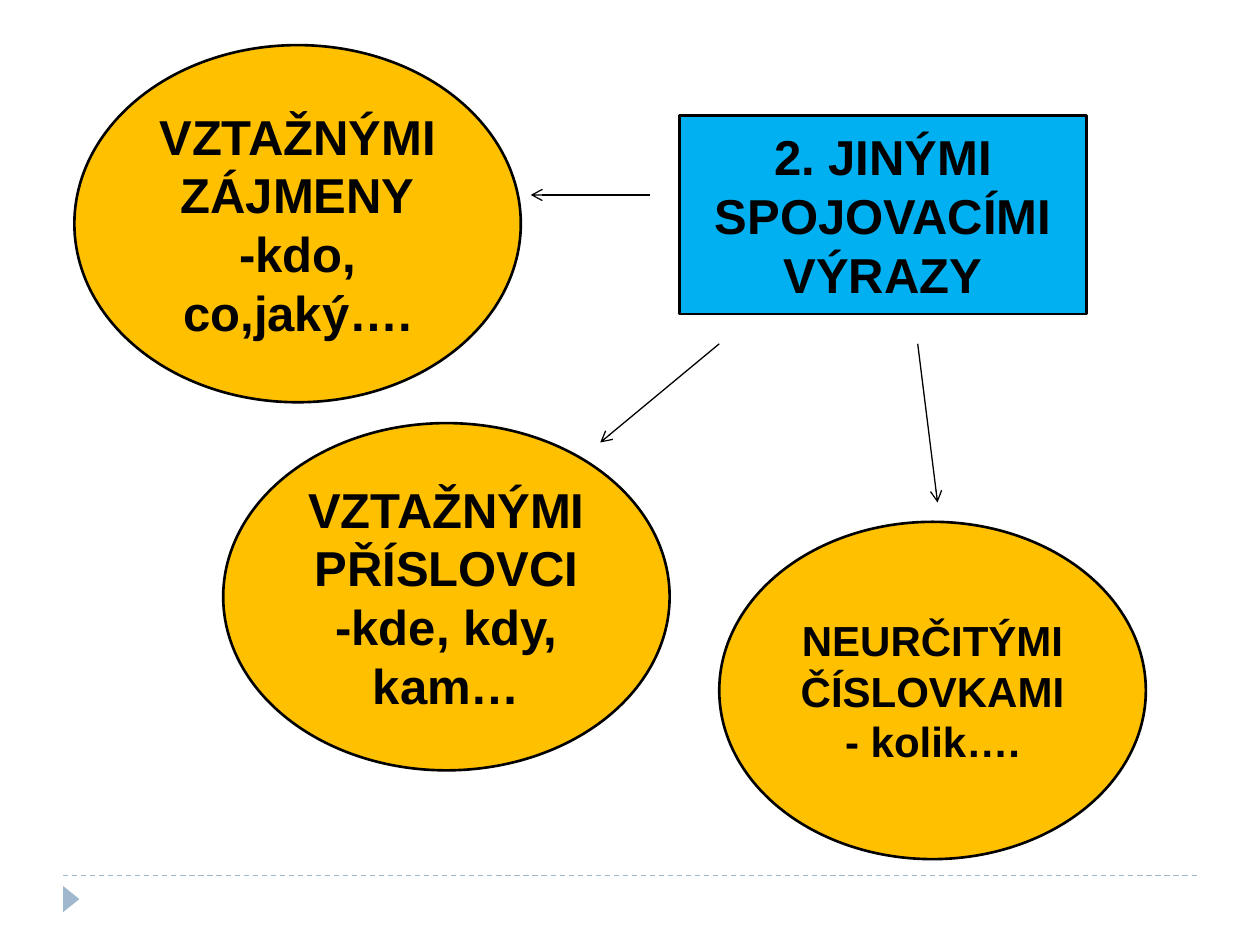
from lxml import etree
from pptx import Presentation
from pptx.dml.color import RGBColor
from pptx.enum.dml import MSO_LINE
from pptx.enum.shapes import MSO_CONNECTOR, MSO_SHAPE
from pptx.enum.text import MSO_ANCHOR, PP_ALIGN
from pptx.oxml.ns import qn
from pptx.util import Cm, Pt

RECT, OVAL = MSO_SHAPE.RECTANGLE, MSO_SHAPE.OVAL
TRIANGLE = MSO_SHAPE.ISOSCELES_TRIANGLE
STRAIGHT, DASH = MSO_CONNECTOR.STRAIGHT, MSO_LINE.DASH
MIDDLE, CENTER = MSO_ANCHOR.MIDDLE, PP_ALIGN.CENTER

BLACK, BLUE, AMBER, ACCENT = "000000", "00B0F0", "FFC000", "9FB8CD"

OVALS = [
    ((14.5, 10.52, 8.6, 6.8), "NEURČITÝMI ČÍSLOVKAMI\v- kolik….", 24),
    ((4.5, 8.53, 9, 7), "VZTAŽNÝMI PŘÍSLOVCI\n-kde, kdy, kam…", 28),
    ((1.5, 0.91, 9, 7.2), "VZTAŽNÝMI ZÁJMENY\n-kdo, co,jaký….", 28),
]
ARROWS = [
    (13.1, 3.93, 10.7, 3.93),
    (14.5, 6.93, 12.1, 8.92),
    (18.5, 6.93, 18.9, 10.13),
]


def color(value):
    """Return the colour for a hex string."""
    return RGBColor.from_string(value)


def add_shape(s, kind, box, fill):
    """Add a filled shape without shadow or outline."""
    sp = s.shapes.add_shape(kind, *map(Cm, box))
    sp.shadow.inherit = False
    sp.fill.solid()
    sp.fill.fore_color.rgb = color(fill)
    sp.line.fill.background()
    return sp


def add_label(s, kind, box, fill, text, size):
    """Add an outlined shape with bold centred text."""
    sp = add_shape(s, kind, box, fill)
    sp.line.color.rgb = color(BLACK)
    sp.line.width = Pt(1.5)
    tf = sp.text_frame
    tf.word_wrap = True
    tf.vertical_anchor = MIDDLE
    tf.text = text
    for p in tf.paragraphs:
        p.alignment = CENTER
        p.font.name = "Arial"
        p.font.size = Pt(size)
        p.font.bold = True
        p.font.color.rgb = color(BLACK)


def add_line(s, ends, line_color):
    """Add a thin straight line without shadow."""
    line = s.shapes.add_connector(STRAIGHT, *map(Cm, ends))
    line.line.color.rgb = color(line_color)
    line.line.width = Pt(0.75)
    etree.SubElement(line._element.spPr, qn("a:effectLst"))
    return line


def add_arrow(s, ends):
    """Add a black line with an open arrowhead at its end."""
    arrow = add_line(s, ends, BLACK)
    etree.SubElement(arrow.line._get_or_add_ln(), qn("a:tailEnd"), type="arrow")


def add_footer(s):
    """Add the dashed footer rule and its triangle marker."""
    rule = add_line(s, (1.27, 17.65, 24.13, 17.65), ACCENT)
    rule.line.dash_style = DASH
    marker = add_shape(s, TRIANGLE, (1.17, 17.96, 0.53, 0.33), ACCENT)
    marker.rotation = 90


def main():
    """Build the slide and save it."""
    prs = Presentation()
    prs.slide_width, prs.slide_height = Cm(25.4), Cm(19.05)
    s = prs.slides.add_slide(prs.slide_layouts[6])
    add_footer(s)
    add_label(s, RECT, (13.7, 2.33, 8.2, 4), BLUE,
              "2. JINÝMI SPOJOVACÍMI VÝRAZY", 28)
    for box, text, size in OVALS:
        add_label(s, OVAL, box, AMBER, text, size)
    for ends in ARROWS:
        add_arrow(s, ends)
    prs.save("out.pptx")


if __name__ == "__main__":
    main()
